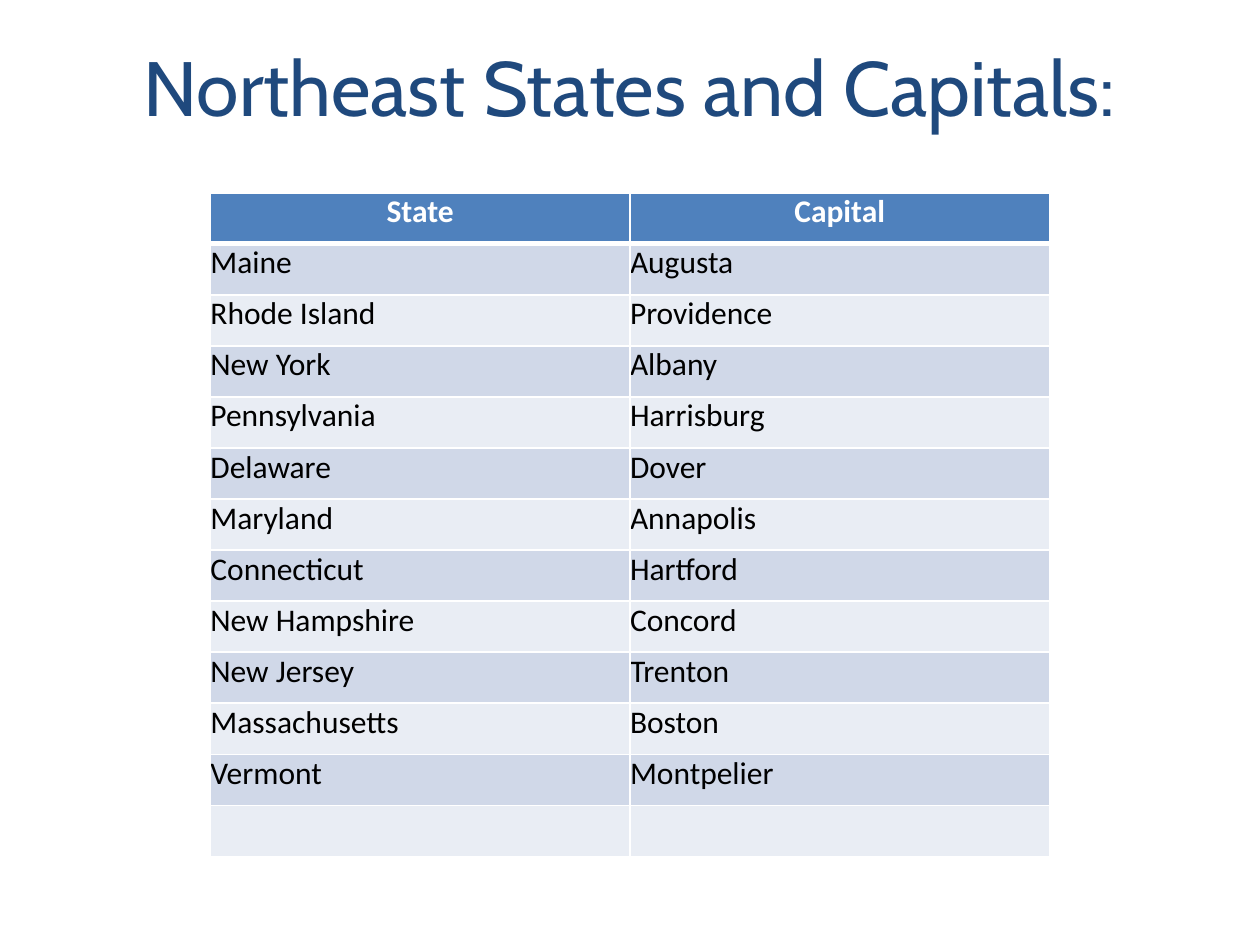
"""Build a slide with a table of the northeast states and their capitals."""
from typing import NamedTuple

from lxml import etree
from pptx import Presentation
from pptx.dml.color import RGBColor
from pptx.enum.text import MSO_ANCHOR, MSO_AUTO_SIZE, PP_ALIGN
from pptx.oxml.ns import qn
from pptx.util import Inches, Pt

LEFT, CENTER = PP_ALIGN.LEFT, PP_ALIGN.CENTER
MIDDLE = MSO_ANCHOR.MIDDLE
NO_AUTOFIT = MSO_AUTO_SIZE.NONE
WHITE, BLACK, NAVY = "FFFFFF", "000000", "1F497D"
HEADER_FILL = "4F81BD"
BAND_FILLS = ("E9EDF4", "D0D8E8")
TABLE_HEIGHT = 5.27
COLUMN_WIDTH = 3.33


class StateCapital(NamedTuple):
    state: str
    capital: str


ROWS = (
    StateCapital("State", "Capital"),
    StateCapital("Maine", "Augusta"),
    StateCapital("Rhode Island", "Providence"),
    StateCapital("New York", "Albany"),
    StateCapital("Pennsylvania", "Harrisburg"),
    StateCapital("Delaware", "Dover"),
    StateCapital("Maryland", "Annapolis"),
    StateCapital("Connecticut", "Hartford"),
    StateCapital("New Hampshire", "Concord"),
    StateCapital("New Jersey", "Trenton"),
    StateCapital("Massachusetts", "Boston"),
    StateCapital("Vermont", "Montpelier"),
    StateCapital("", ""),
)


def color(value: str) -> RGBColor:
    return RGBColor.from_string(value)


def write_text(text_frame, text: str, *, size: float, font_name: str,
               text_color: str, bold: bool = False, align=LEFT) -> None:
    paragraph = text_frame.paragraphs[0]
    paragraph.alignment = align
    if text:
        paragraph.add_run().text = text
    for font in (paragraph.font, *(run.font for run in paragraph.runs)):
        font.size = Pt(size)
        font.name = font_name
        font.bold = bold
        font.color.rgb = color(text_color)


def set_borders(cell, *, top: float = 1, bottom: float = 1) -> None:
    properties = cell._tc.get_or_add_tcPr()
    for side, width in (("L", 1), ("R", 1), ("T", top), ("B", bottom)):
        line = etree.SubElement(properties, qn(f"a:ln{side}"), w=str(Pt(width)))
        fill = etree.SubElement(line, qn("a:solidFill"))
        etree.SubElement(fill, qn("a:srgbClr"), val=WHITE)


def draw_cell(cell, text: str, row: int) -> None:
    is_header = row == 0
    cell.margin_left = cell.margin_right = 0
    cell.margin_top = cell.margin_bottom = 0
    set_borders(cell, top=3 if row == 1 else 1, bottom=3 if is_header else 1)
    cell.fill.solid()
    cell.fill.fore_color.rgb = color(HEADER_FILL if is_header else BAND_FILLS[row % 2])
    write_text(cell.text_frame, text, size=18, font_name="Calibri",
               text_color=WHITE if is_header else BLACK, bold=is_header,
               align=CENTER if is_header else LEFT)


def draw_table(slide, rows: tuple[StateCapital, ...]) -> None:
    column_count = len(StateCapital._fields)
    table = slide.shapes.add_table(
        len(rows), column_count, Inches(1.67), Inches(1.53),
        Inches(COLUMN_WIDTH * column_count), Inches(TABLE_HEIGHT)).table
    for row, entry in enumerate(rows):
        for column, text in enumerate(entry):
            draw_cell(table.cell(row, column), text, row)


def draw_title(slide, text: str) -> None:
    title = slide.shapes.title
    title.left, title.top = Inches(0.5), Inches(0.42)
    title.width, title.height = Inches(9), Inches(1.17)
    text_frame = title.text_frame
    text_frame.word_wrap = True
    text_frame.auto_size = NO_AUTOFIT
    text_frame.vertical_anchor = MIDDLE
    text_frame.margin_bottom = Inches(0.7)
    write_text(text_frame, text, size=44, font_name="Cabin",
               text_color=NAVY, align=CENTER)


def main() -> None:
    presentation = Presentation()
    presentation.slide_width, presentation.slide_height = Inches(10), Inches(7.5)
    slide = presentation.slides.add_slide(presentation.slide_layouts[5])
    draw_table(slide, ROWS)
    draw_title(slide, "Northeast States and Capitals:")
    presentation.save("out.pptx")


if __name__ == "__main__":
    main()
